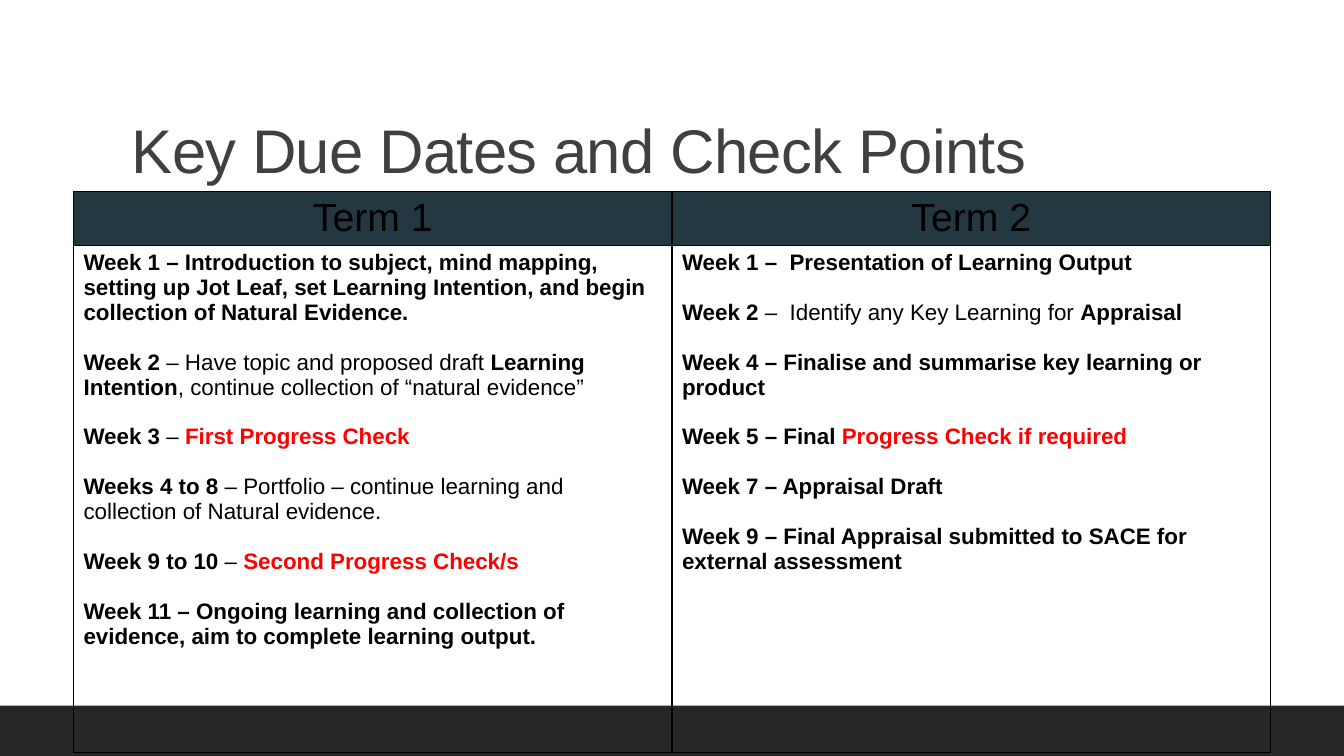
from lxml import etree
from pptx import Presentation
from pptx.dml.color import RGBColor
from pptx.enum.shapes import MSO_SHAPE
from pptx.enum.text import MSO_ANCHOR, PP_ALIGN
from pptx.oxml.ns import qn
from pptx.util import Pt

RECT = MSO_SHAPE.RECTANGLE
BOTTOM = MSO_ANCHOR.BOTTOM
CENTER, LEFT = PP_ALIGN.CENTER, PP_ALIGN.LEFT
W, H = 960, 540
FONT = "Arial"
BLACK, RED, GREY = "000000", "FF0000", "404040"
FOOTER_FILL, HEADER_FILL = "262626", "243841"

TITLE = {"size": 44, "bold": False, "color": GREY}
HEADER = {"size": 28, "bold": False, "color": BLACK}
PLAIN = {"size": 16, "bold": False, "color": BLACK}
BOLD = {**PLAIN, "bold": True}
CHECK = {**BOLD, "color": RED}

TERMS = {
    "Term 1": [
        [("Week 1 – Introduction to subject, mind mapping, setting up Jot Leaf, "
          "set Learning Intention, and begin collection of Natural Evidence.", BOLD)],
        [("Week 2 ", BOLD), ("– Have topic and proposed draft ", PLAIN),
         ("Learning Intention", BOLD),
         (", continue collection of “natural evidence”", PLAIN)],
        [("Week 3 ", BOLD), ("– ", PLAIN), ("First Progress Check", CHECK)],
        [("Weeks 4 to 8 ", BOLD),
         ("– Portfolio – continue learning and collection of Natural evidence.", PLAIN)],
        [("Week 9 to 10 ", BOLD), ("– ", PLAIN), ("Second Progress Check/s", CHECK)],
        [("Week 11 – Ongoing learning and collection of evidence, "
          "aim to complete learning output.", BOLD)],
    ],
    "Term 2": [
        [("Week 1 –  Presentation of Learning Output", BOLD)],
        [("Week 2 ", BOLD), ("–  Identify any Key Learning for ", PLAIN),
         ("Appraisal", BOLD)],
        [("Week 4 – Finalise and summarise key learning or product", BOLD)],
        [("Week 5 – Final ", BOLD), ("Progress Check if required", CHECK)],
        [("Week 7 – Appraisal Draft", BOLD)],
        [("Week 9 – Final Appraisal submitted to SACE for external assessment", BOLD)],
    ],
}


def rgb(color):
    return RGBColor.from_string(color)


def write(tf, paragraphs, align=LEFT, gap=0):
    """Fill a text frame with paragraphs of (text, format) runs, gap points apart."""
    for i, runs in enumerate(paragraphs):
        p = tf.paragraphs[0] if i == 0 else tf.add_paragraph()
        p.alignment = align
        if i < len(paragraphs) - 1:
            p.space_after = Pt(gap)
        for text, fmt in runs:
            r = p.add_run()
            r.text = text
            values = {"name": FONT, "size": Pt(fmt["size"]), "bold": fmt["bold"]}
            for key, value in values.items():
                setattr(r.font, key, value)
            r.font.color.rgb = rgb(fmt["color"])


def add_footer_bar(s, x, y, w, h):
    sp = s.shapes.add_shape(RECT, Pt(x), Pt(y), Pt(w), Pt(h))
    sp.shadow.inherit = False
    sp.fill.solid()
    sp.fill.fore_color.rgb = rgb(FOOTER_FILL)
    sp.line.fill.background()


def add_title(s, x, y, w, h, text):
    tf = s.shapes.add_textbox(Pt(x), Pt(y), Pt(w), Pt(h)).text_frame
    tf.word_wrap = True
    tf.vertical_anchor = BOTTOM
    write(tf, [[(text, TITLE)]])
    p = tf.paragraphs[0]
    p.line_spacing = 0.9
    p.runs[0].font._element.set("spc", "-50")


def add_borders(cell, color=BLACK, width=1):
    tcPr = cell._tc.get_or_add_tcPr()
    for side in ("a:lnL", "a:lnR", "a:lnT", "a:lnB"):
        ln = etree.SubElement(tcPr, qn(side), w=str(Pt(width)))
        fill = etree.SubElement(ln, qn("a:solidFill"))
        etree.SubElement(fill, qn("a:srgbClr"), val=color)


def add_terms_table(s, x, y, w, h, terms, header_h=38.5):
    """One column per term: its name above its weekly due dates."""
    table = s.shapes.add_table(2, len(terms), Pt(x), Pt(y), Pt(w), Pt(h)).table
    table.first_row = table.horz_banding = False
    table.rows[0].height = Pt(header_h)
    table.rows[1].height = Pt(h - header_h)
    for col, (name, weeks) in enumerate(terms.items()):
        table.columns[col].width = Pt(w / len(terms))
        head, body = table.cell(0, col), table.cell(1, col)
        for cell in (head, body):
            add_borders(cell)
        head.margin_bottom = Pt(1)
        head.fill.solid()
        head.fill.fore_color.rgb = rgb(HEADER_FILL)
        body.fill.background()
        write(head.text_frame, [[(name, HEADER)]], CENTER)
        write(body.text_frame, weeks, gap=17.8)


def main():
    prs = Presentation()
    prs.slide_width, prs.slide_height = Pt(W), Pt(H)
    s = prs.slides.add_slide(prs.slide_layouts[6])
    add_footer_bar(s, 0, H - 36, W, 36)
    add_title(s, 87, 22.3, 792, 114.5, "Key Due Dates and Check Points")
    add_terms_table(s, 52.5, 136.8, 855, 401, TERMS)
    prs.save("out.pptx")


if __name__ == "__main__":
    main()
